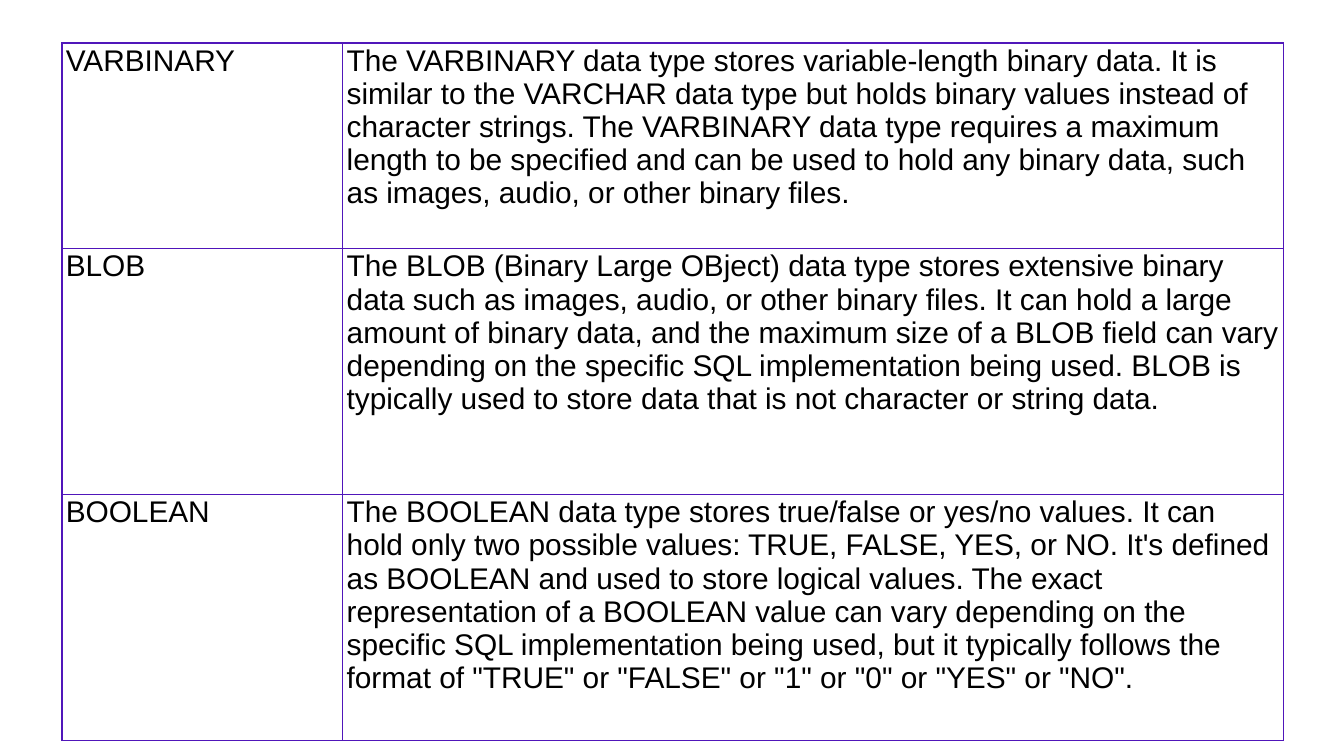
import dataclasses
import typing

import lxml.etree
import pptx
import pptx.dml.color
import pptx.oxml.ns
import pptx.util


@dataclasses.dataclass(frozen=True)
class Theme:
    font: str = "Arial"
    size: float = 16
    ink: str = "000000"
    paper: str = "FFFFFF"
    line: float = 1


class Entry(typing.NamedTuple):
    name: str
    text: str
    height: float  # share of the slide's height
    edge: str  # left, right and top border
    base: str  # bottom border


THEME = Theme()
WIDE = 10
HIGH = WIDE * 9 / 16
WIDTH, HEIGHT = pptx.util.Inches(WIDE), pptx.util.Inches(HIGH)
LEFT, TOP = 0.46 / WIDE, 0.32 / HIGH
COLS = (2.09 / WIDE, 7 / WIDE)
SHORT, TALL = 1.53 / HIGH, 1.83 / HIGH
ENTRIES = (
    Entry(
        "VARBINARY",
        "The VARBINARY data type stores variable-length binary data. It is "
        "similar to the VARCHAR data type but holds binary values instead of "
        "character strings. The VARBINARY data type requires a maximum "
        "length to be specified and can be used to hold any binary data, such "
        "as images, audio, or other binary files.",
        SHORT, "5017BA", "5014BA",
    ),
    Entry(
        "BLOB",
        "The BLOB (Binary Large OBject) data type stores extensive binary "
        "data such as images, audio, or other binary files. It can hold a large "
        "amount of binary data, and the maximum size of a BLOB field can vary "
        "depending on the specific SQL implementation being used. BLOB is "
        "typically used to store data that is not character or string data.",
        TALL, "5014BA", "5016BA",
    ),
    Entry(
        "BOOLEAN",
        "The BOOLEAN data type stores true/false or yes/no values. It can "
        "hold only two possible values: TRUE, FALSE, YES, or NO. It's defined "
        "as BOOLEAN and used to store logical values. The exact "
        "representation of a BOOLEAN value can vary depending on the "
        "specific SQL implementation being used, but it typically follows the "
        'format of "TRUE" or "FALSE" or "1" or "0" or "YES" or "NO".',
        TALL, "5016BA", "5016BA",
    ),
)


def rgb(code: str) -> pptx.dml.color.RGBColor:
    return pptx.dml.color.RGBColor.from_string(code)


def add_borders(cell: typing.Any, edge: str, base: str) -> None:
    """Put the four lines ahead of the cell's fill, as the schema asks."""
    qn = pptx.oxml.ns.qn
    props = cell._tc.get_or_add_tcPr()
    for place, side in enumerate("LRTB"):
        line = lxml.etree.Element(qn(f"a:ln{side}"), w=str(pptx.util.Pt(THEME.line)))
        fill = lxml.etree.SubElement(line, qn("a:solidFill"))
        code = base if side == "B" else edge
        lxml.etree.SubElement(fill, qn("a:srgbClr"), val=code)
        props.insert(place, line)


def fill_cell(cell: typing.Any, text: str, entry: Entry) -> None:
    cell.text = text
    cell.margin_left = cell.margin_right = pptx.util.Inches(0.03)
    cell.margin_top = cell.margin_bottom = pptx.util.Inches(0.01)
    cell.fill.solid()
    cell.fill.fore_color.rgb = rgb(THEME.paper)
    font = cell.text_frame.paragraphs[0].font
    font.name, font.size = THEME.font, pptx.util.Pt(THEME.size)
    font.color.rgb = rgb(THEME.ink)
    add_borders(cell, entry.edge, entry.base)


def add_types(slide: typing.Any) -> None:
    """Add the table of data types."""
    tall = sum(entry.height for entry in ENTRIES)
    table = slide.shapes.add_table(
        len(ENTRIES), len(COLS),
        round(LEFT * WIDTH), round(TOP * HEIGHT),
        round(sum(COLS) * WIDTH), round(tall * HEIGHT),
    ).table
    table.first_row = table.horz_banding = False
    for col, share in zip(table.columns, COLS):
        col.width = round(share * WIDTH)
    for row, entry in zip(table.rows, ENTRIES):
        row.height = round(entry.height * HEIGHT)
        for cell, text in zip(row.cells, (entry.name, entry.text)):
            fill_cell(cell, text, entry)


def main() -> None:
    deck = pptx.Presentation()
    deck.slide_width, deck.slide_height = WIDTH, HEIGHT
    add_types(deck.slides.add_slide(deck.slide_layouts[6]))
    deck.save("out.pptx")


if __name__ == "__main__":
    main()
